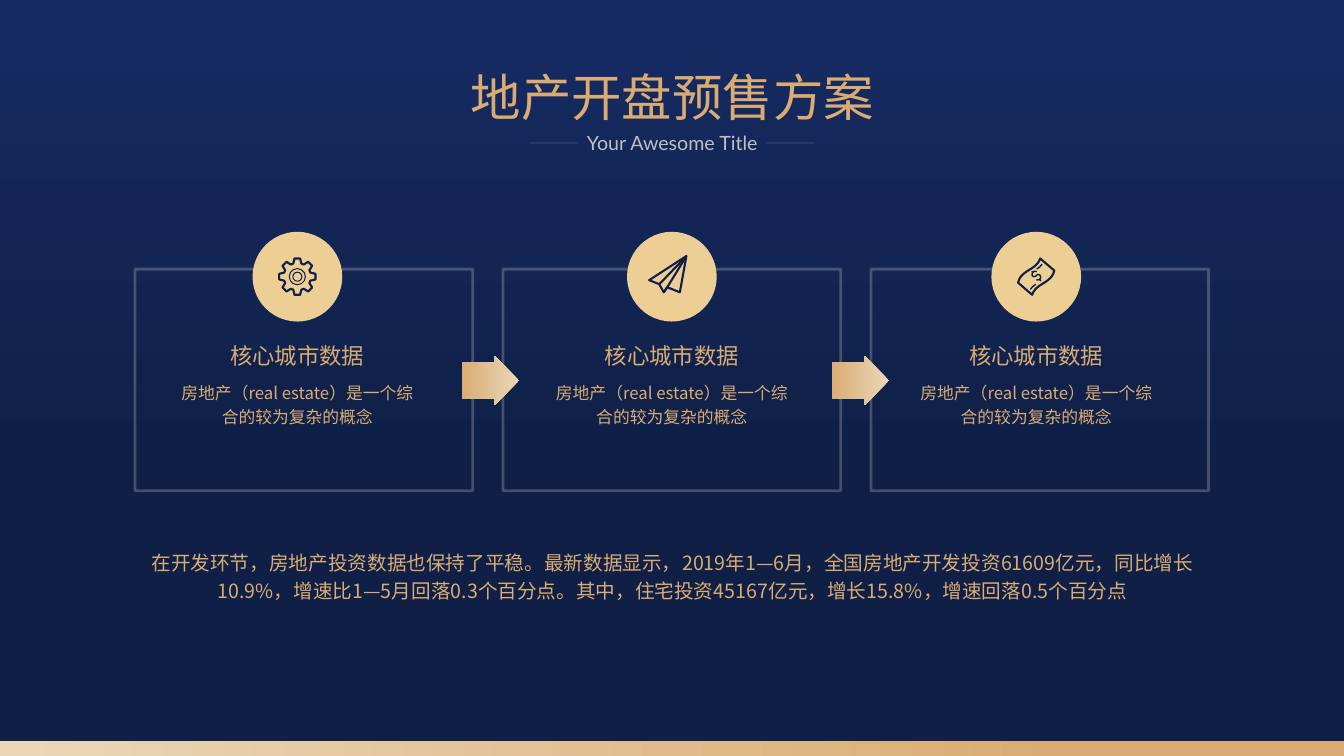
import math
from dataclasses import dataclass
from typing import Any, Iterable

import pptx
import pptx.dml.color
import pptx.enum.shapes
import pptx.enum.text
import pptx.oxml.ns
import pptx.oxml.xmlchemy
import pptx.util

RGBColor = pptx.dml.color.RGBColor
NAVY_TOP = RGBColor(0x15, 0x2B, 0x62)
NAVY = RGBColor(0x0F, 0x1F, 0x46)
GOLD = RGBColor(0xDA, 0xAC, 0x73)
PALE_GOLD = RGBColor(0xEA, 0xD7, 0xB8)
DISC_GOLD = RGBColor(0xED, 0xCF, 0x96)
FRAME_GREY = RGBColor(0xD9, 0xD9, 0xD9)
SUBTITLE_GREY = RGBColor(0xBF, 0xBF, 0xBF)

CHINESE_FONT = "Noto Sans CJK SC"
GRID = pptx.util.Inches(0.1)  # one column, and one row, of the slide grid
COLUMNS, ROWS = 133.33, 75
CARD_WIDTH, CARD_STEP = 33.5, 36.5
DISC_SIZE, DISC_MIDDLE = 8.9, 27.45
ICON_SCALE = pptx.util.Inches(1) / 1000  # icon points are thousandths of an inch

Point = tuple[float, float]
Shapes = pptx.enum.shapes.MSO_SHAPE


@dataclass(frozen=True)
class Box:
    """A frame in grid columns and rows."""
    column: float
    row: float
    columns: float
    rows: float

    def lengths(self) -> list[int]:
        return [round(n * GRID) for n in (self.column, self.row, self.columns, self.rows)]


@dataclass(frozen=True)
class Stroke:
    points: list[Point]
    width: float = 1.5
    closed: bool = False


@dataclass(frozen=True)
class Card:
    center: float
    icon: list[Stroke]
    ring_diameters: tuple[float, ...] = ()
    heading: str = "核心城市数据"
    body: str = "房地产（real estate）是一个综合的较为复杂的概念"


def gear_outline(teeth: int = 8) -> list[Point]:
    tooth = [(-40, -130), (-28, -180), (28, -180), (40, -130)]
    turns = [2 * math.pi * i / teeth for i in range(teeth)]
    return [(x * math.cos(t) - y * math.sin(t), x * math.sin(t) + y * math.cos(t))
            for t in turns for x, y in tooth]


def bezier(a: Point, b: Point, c: Point, d: Point, steps: int = 12) -> list[Point]:
    """Points along a cubic curve, both ends included."""
    def at(t: float, axis: int) -> float:
        s = 1 - t
        return (s**3 * a[axis] + 3 * s * s * t * b[axis]
                + 3 * s * t * t * c[axis] + t**3 * d[axis])
    return [(at(i / steps, 0), at(i / steps, 1)) for i in range(steps + 1)]


def banknote_outline() -> list[Point]:
    upper = bezier((-180, 60), (-150, -70), (0, -60), (40, -180))
    lower = [(-x, -y) for x, y in upper]
    return upper + lower


GEAR = [Stroke(gear_outline(), closed=True)]
PLANE = [
    Stroke([(145, -205), (-225, 35), (-125, 75), (-80, 155), (-45, 105), (80, 155)], closed=True),
    Stroke([(145, -205), (-125, 75)]),
    Stroke([(145, -205), (-45, 105), (-80, 155)]),
]
BANKNOTE = [
    Stroke(banknote_outline(), closed=True),
    Stroke([(5, -50), (-20, -55), (-40, -35), (-42, -10), (-25, 0), (-5, -5), (12, -22),
            (35, -18), (45, 8), (32, 30), (2, 32)], 1),
    Stroke([(-45, -52), (-30, -38)], 1),
    Stroke([(34, 28), (48, 42)], 1),
    Stroke([(-58, 125), (-35, 98), (-5, 75)], 1),
    Stroke([(5, -75), (35, -98), (58, -125)], 1),
]
CARDS = [
    Card(29.5, GEAR, (1.6, 0.9)),
    Card(66.65, PLANE),
    Card(102.8, BANKNOTE),
]


def apply_format(target: Any, values: dict[str, Any]) -> None:
    for name, value in values.items():
        setattr(target, name, value)


def add_element(parent: Any, tag: str, **attributes: str) -> None:
    element = pptx.oxml.xmlchemy.OxmlElement(tag)
    for name, value in attributes.items():
        element.set(name, value)
    parent.append(element)


def set_gradient(fill: Any, stops: Iterable[tuple[float, RGBColor]], angle: float) -> None:
    """Two-stop gradient; the angle runs counter-clockwise."""
    fill.gradient()
    fill.gradient_angle = angle
    for stop, (position, color) in zip(fill.gradient_stops, stops):
        stop.position = position
        stop.color.rgb = color


def set_line(shape: Any, color: RGBColor, width: float, opacity: int = 100) -> None:
    shape.line.color.rgb = color
    shape.line.width = pptx.util.Pt(width)
    if opacity < 100:
        line = shape.element.spPr.find(pptx.oxml.ns.qn("a:ln"))
        line_color = next(line.iter(pptx.oxml.ns.qn("a:srgbClr")))
        add_element(line_color, "a:alpha", val=str(opacity * 1000))


def add_plain_shape(slide: Any, kind: Any, box: Box, color: RGBColor | None = None) -> Any:
    shape = slide.shapes.add_shape(kind, *box.lengths())
    shape.shadow.inherit = False
    shape.line.fill.background()
    if color is None:
        shape.fill.background()
    else:
        shape.fill.solid()
        shape.fill.fore_color.rgb = color
    return shape


def add_text(slide: Any, box: Box, text: str, size: float, color: RGBColor = GOLD,
             font_name: str = CHINESE_FONT, spacing: float = 1.0) -> Any:
    frame = slide.shapes.add_textbox(*box.lengths()).text_frame
    apply_format(frame, {"word_wrap": True,
                         "auto_size": pptx.enum.text.MSO_AUTO_SIZE.SHAPE_TO_FIT_TEXT})
    paragraph = frame.paragraphs[0]
    apply_format(paragraph, {"alignment": pptx.enum.text.PP_ALIGN.CENTER,
                             "line_spacing": spacing})
    run = paragraph.add_run()
    run.text = text
    apply_format(run.font, {"size": pptx.util.Pt(size), "name": font_name})
    run.font.color.rgb = color
    add_element(run.font._element, "a:ea", typeface=font_name)
    return run


def add_stroke(slide: Any, stroke: Stroke, center: float) -> None:
    points = [(round(x), round(y)) for x, y in stroke.points]
    builder = slide.shapes.build_freeform(*points[0], scale=ICON_SCALE)
    builder.add_line_segments(points[1:], close=stroke.closed)
    shape = builder.convert_to_shape(round(center * GRID), round(DISC_MIDDLE * GRID))
    shape.shadow.inherit = False
    shape.fill.background()
    set_line(shape, NAVY, stroke.width)


def add_disc(slide: Any, center: float, size: float, color: RGBColor | None = None) -> Any:
    box = Box(center - size / 2, DISC_MIDDLE - size / 2, size, size)
    return add_plain_shape(slide, Shapes.OVAL, box, color)


def add_card(slide: Any, card: Card) -> None:
    add_disc(slide, card.center, DISC_SIZE, DISC_GOLD)
    for stroke in card.icon:
        add_stroke(slide, stroke, card.center)
    for diameter in card.ring_diameters:
        set_line(add_disc(slide, card.center, diameter), NAVY, 0.75)
    add_text(slide, Box(card.center - 13.05, 37.1, 26.1, 5.7), card.body, 12, spacing=1.2)
    add_text(slide, Box(card.center - 11.85, 33.5, 23.7, 3.7), card.heading, 16)


def add_arrow(slide: Any, column: float) -> None:
    arrow = add_plain_shape(slide, Shapes.UP_ARROW, Box(column, 34.9, 4.9, 5.7))
    arrow.rotation = 90
    arrow.adjustments[0], arrow.adjustments[1] = 0.72, 0.5
    set_gradient(arrow.fill, [(0, PALE_GOLD), (1, GOLD)], 270)


def add_subtitle_rule(slide: Any, column: float) -> None:
    left, top, width, _ = Box(column, 14.2, 4.75, 0).lengths()
    rule = slide.shapes.add_connector(
        pptx.enum.shapes.MSO_CONNECTOR.STRAIGHT, left, top, left + width, top)
    set_line(rule, FRAME_GREY, 0.5, 25)
    add_element(rule.element.spPr, "a:effectLst")


def main() -> None:
    presentation = pptx.Presentation()
    apply_format(presentation, {"slide_width": round(COLUMNS * GRID),
                                "slide_height": ROWS * GRID})
    slide = presentation.slides.add_slide(presentation.slide_layouts[6])
    set_gradient(slide.background.fill, [(0.01, NAVY_TOP), (0.65, NAVY)], 270)
    for i in range(len(CARDS)):
        box = Box(13.4 + i * CARD_STEP, 26.7, CARD_WIDTH, 22)
        set_line(add_plain_shape(slide, Shapes.RECTANGLE, box), FRAME_GREY, 2, 25)
    for card in CARDS:
        add_card(slide, card)
    for column in (46.2, 82.9):
        add_arrow(slide, column)
    title = add_text(slide, Box(25.1, 6.1, 83.2, 7.1), "地产开盘预售方案", 36)
    set_gradient(title.font.fill, [(0.01, GOLD), (0.74, PALE_GOLD)], 270)
    add_text(slide, Box(40.1, 12.5, 53.2, 3.4), "Your Awesome Title", 14, SUBTITLE_GREY, "Lato")
    for column in (52.6, 76):
        add_subtitle_rule(slide, column)
    add_text(slide, Box(13.7, 53.7, 106, 6.5),
             "在开发环节，房地产投资数据也保持了平稳。最新数据显示，2019年1—6月，全国房地产开发投资61609亿元，"
             "同比增长10.9%，增速比1—5月回落0.3个百分点。其中，住宅投资45167亿元，增长15.8%，增速回落0.5个百分点",
             14, spacing=1.2)
    band = add_plain_shape(slide, Shapes.RECTANGLE, Box(0, 73.5, COLUMNS, 1.5))
    set_gradient(band.fill, [(0.01, PALE_GOLD), (0.79, GOLD)], 0)
    presentation.save("out.pptx")


if __name__ == "__main__":
    main()
